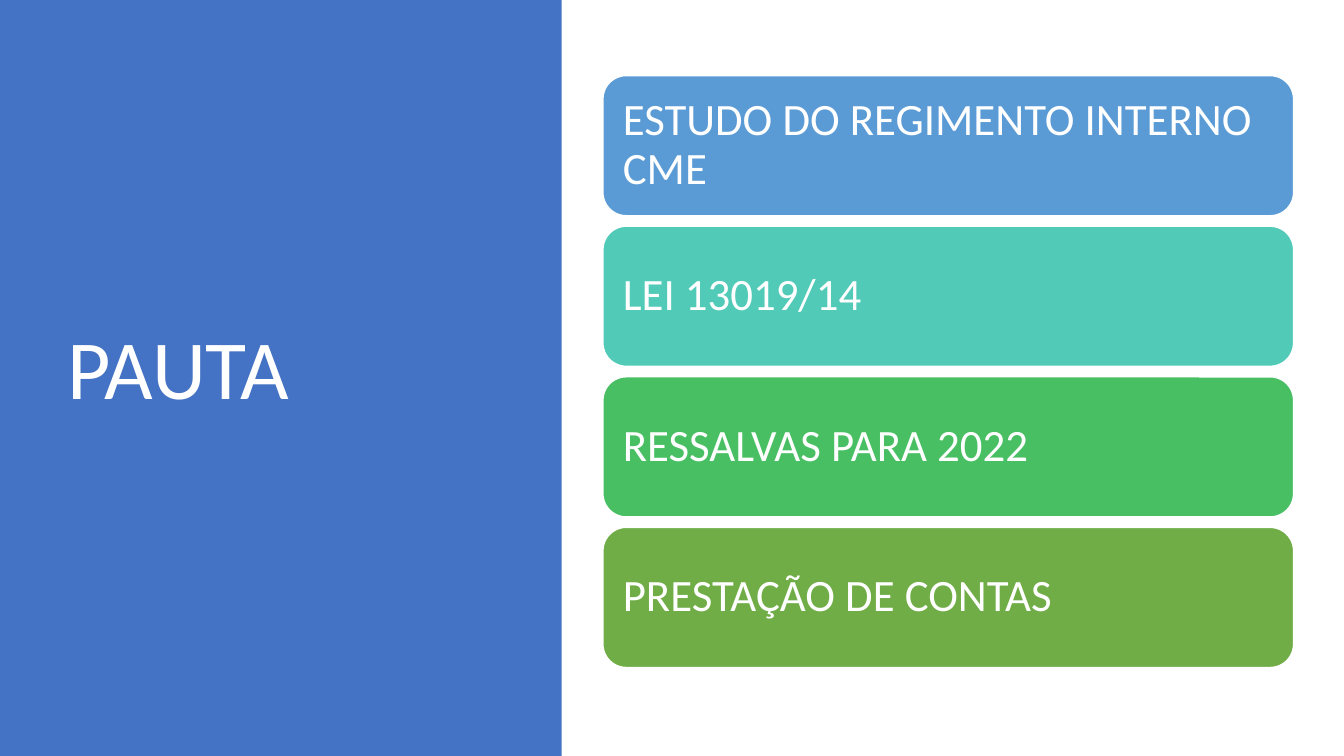
from dataclasses import dataclass

from pptx import Presentation
from pptx import util as u
from pptx.dml import color
from pptx.enum import shapes, text

COLOURS = {
    "white": "FFFFFF",
    "panel": "4472C4",
    "blue": "5B9BD5",
    "teal": "52CAB8",
    "green": "49BF64",
    "olive": "70AD47",
}

CARD_LEFT, CARD_TOP = 5.98, 0.75
CARD_WIDTH, CARD_HEIGHT = 6.85, 1.39
CARD_PITCH = 1.494
CARD_INSET = u.Inches(0.13)


@dataclass(frozen=True)
class AgendaItem:
    wording: str
    colour: str


AGENDA = [
    AgendaItem("ESTUDO DO REGIMENTO INTERNO CME", "blue"),
    AgendaItem("LEI 13019/14", "teal"),
    AgendaItem("RESSALVAS PARA 2022", "green"),
    AgendaItem("PRESTAÇÃO DE CONTAS", "olive"),
]


def rgb(name: str) -> color.RGBColor:
    return color.RGBColor.from_string(COLOURS[name])


def apply(target, values: dict) -> None:
    for attribute, value in values.items():
        setattr(target, attribute, value)


def write(shape, wording: str, size: int, frame_format: dict, space_after: int = 0) -> None:
    """Fill a shape with one left-aligned white paragraph."""
    frame = shape.text_frame
    frame.text = wording
    apply(frame, {"word_wrap": True, "auto_size": text.MSO_AUTO_SIZE.NONE,
                  "vertical_anchor": text.MSO_ANCHOR.MIDDLE, **frame_format})
    paragraph = frame.paragraphs[0]
    apply(paragraph, {"alignment": text.PP_ALIGN.LEFT, "line_spacing": 0.9,
                      "space_before": u.Pt(0), "space_after": u.Pt(space_after)})
    font = paragraph.runs[0].font
    apply(font, {"name": "Calibri", "size": u.Pt(size)})
    font.color.rgb = rgb("white")


def add_block(slide, kind, left: float, top: float, width: float, height: float, colour: str):
    block = slide.shapes.add_shape(kind, *map(u.Inches, (left, top, width, height)))
    block.shadow.inherit = False
    block.fill.solid()
    block.fill.fore_color.rgb = rgb(colour)
    return block


def add_card(slide, item: AgendaItem, row: int) -> None:
    card = add_block(slide, shapes.MSO_SHAPE.ROUNDED_RECTANGLE, CARD_LEFT,
                     CARD_TOP + row * CARD_PITCH, CARD_WIDTH, CARD_HEIGHT, item.colour)
    card.line.color.rgb = rgb("white")
    card.line.width = u.Pt(1)
    sides = ("left", "top", "right", "bottom")
    write(card, item.wording, 32, {f"margin_{side}": CARD_INSET for side in sides}, 11)


def main() -> None:
    deck = Presentation()
    apply(deck, {"slide_width": u.Inches(13.33), "slide_height": u.Inches(7.5)})
    slide = deck.slides.add_slide(deck.slide_layouts[5])

    # Heading over the left panel, with the panel sent to the back
    panel = add_block(slide, shapes.MSO_SHAPE.RECTANGLE, 0, 0, 5.57, 7.5, "panel")
    panel.line.fill.background()
    heading = slide.shapes.title
    heading._element.addprevious(panel._element)
    apply(heading, {"left": u.Inches(0.57), "top": u.Inches(0.68),
                    "width": u.Inches(4.16), "height": u.Inches(6.02)})
    write(heading, "PAUTA", 60, {})

    # Agenda cards
    for row, item in enumerate(AGENDA):
        add_card(slide, item, row)

    deck.save("out.pptx")


if __name__ == "__main__":
    main()
